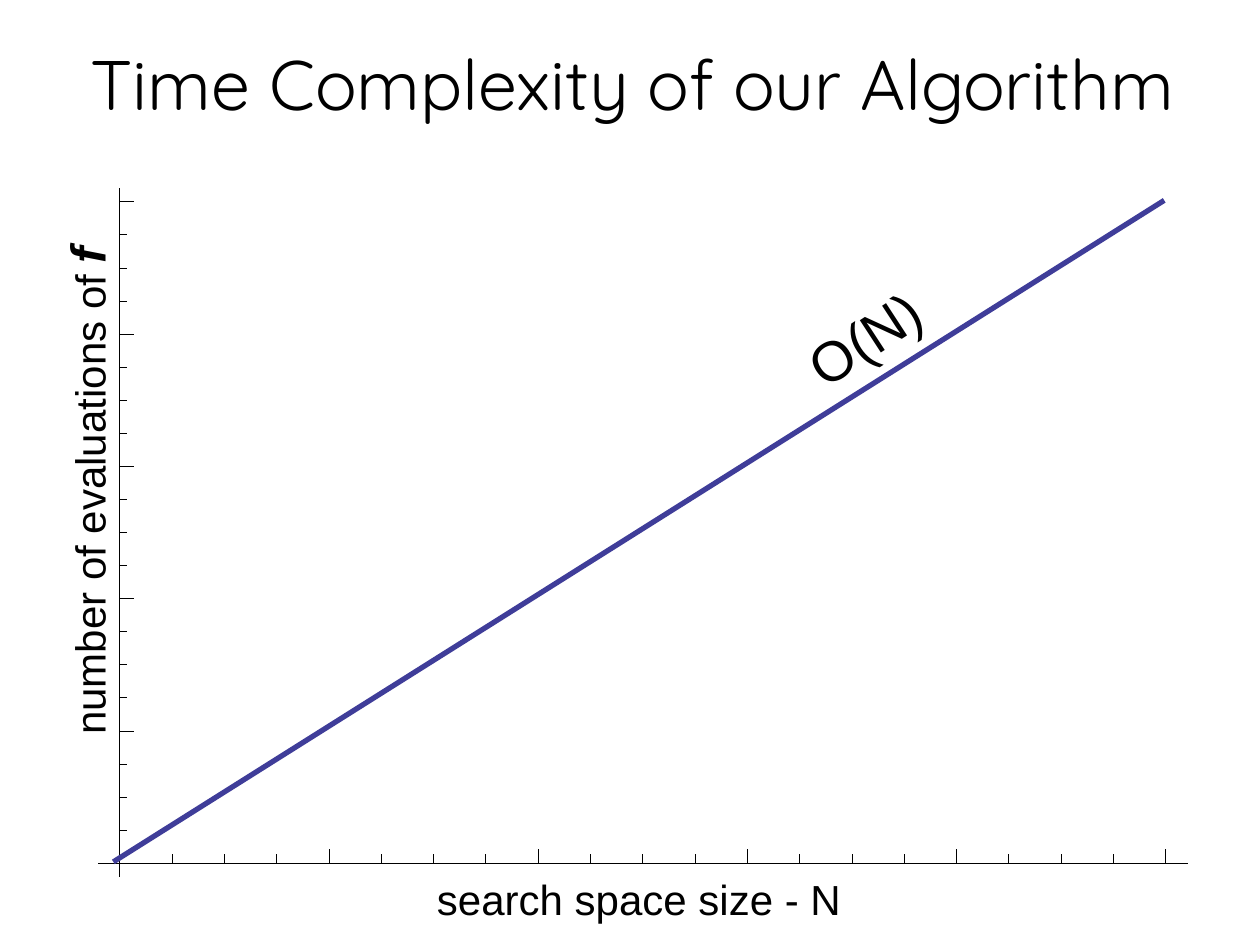
from lxml import etree
from pptx import Presentation
from pptx.dml.color import RGBColor
from pptx.enum.shapes import MSO_CONNECTOR
from pptx.enum.text import MSO_ANCHOR, MSO_AUTO_SIZE, PP_ALIGN
from pptx.oxml.ns import qn
from pptx.util import Inches, Pt

STRAIGHT = MSO_CONNECTOR.STRAIGHT
MIDDLE = MSO_ANCHOR.MIDDLE
NO_FIT, GROW = MSO_AUTO_SIZE.NONE, MSO_AUTO_SIZE.SHAPE_TO_FIT_TEXT
LEFT = PP_ALIGN.LEFT

BLACK, BLUE = "000000", "3F3D99"
ORIGIN_X, ORIGIN_Y = 0.95, 6.85
END_X, END_Y = 9.25, 1.6
TICKS, MAJOR_EVERY = 20, 4


def color(value):
    """Turn a hex string into a colour."""
    return RGBColor.from_string(value)


def add_text(p, text, size=24, font="Arial", fill=BLACK, bold=False, italic=False):
    """Append a formatted run to a paragraph."""
    r = p.add_run()
    r.text = text
    r.font.size = Pt(size)
    r.font.name = font
    r.font.bold = bold
    r.font.italic = italic
    r.font.color.rgb = color(fill)


def add_title(slide, text):
    """Place and format the title placeholder."""
    sp = slide.shapes.title
    sp.left, sp.top = Inches(0.62), Inches(-0.03)
    sp.width, sp.height = Inches(9.1), Inches(1.45)
    tf = sp.text_frame
    tf.auto_size = NO_FIT
    tf.word_wrap = True
    tf.vertical_anchor = MIDDLE
    p = tf.paragraphs[0]
    p.alignment = LEFT
    p.line_spacing = 0.9
    add_text(p, text, size=40, font="Quicksand")


def add_label(shapes, left, top, width, height, rotation=0):
    """Add an unwrapped text box and return its paragraph."""
    sp = shapes.add_textbox(Inches(left), Inches(top), Inches(width), Inches(height))
    sp.rotation = rotation
    tf = sp.text_frame
    tf.word_wrap = False
    tf.auto_size = GROW
    return tf.paragraphs[0]


def add_line(shapes, x1, y1, x2, y2):
    """Add a thin black line without a shadow."""
    line = shapes.add_connector(STRAIGHT, Inches(x1), Inches(y1), Inches(x2), Inches(y2))
    line.line.color.rgb = color(BLACK)
    line.line.width = Pt(0.25)
    etree.SubElement(line._element.spPr, qn("a:effectLst"))


def add_axes(shapes):
    """Draw both axes with major and minor ticks."""
    add_line(shapes, 0.78, ORIGIN_Y, 9.43, ORIGIN_Y)
    add_line(shapes, ORIGIN_X, 6.96, ORIGIN_X, 1.49)
    for i in range(TICKS + 1):
        major = i % MAJOR_EVERY == 0
        x = ORIGIN_X + i * (END_X - ORIGIN_X) / TICKS
        y = ORIGIN_Y + i * (END_Y - ORIGIN_Y) / TICKS
        add_line(shapes, x, ORIGIN_Y, x, ORIGIN_Y - (0.11 if major else 0.07))
        add_line(shapes, ORIGIN_X, y, ORIGIN_X + (0.11 if major else 0.06), y)


def add_curve(shapes, points):
    """Draw an open curve through the points."""
    start, *rest = [(Inches(x), Inches(y)) for x, y in points]
    builder = shapes.build_freeform(*start)
    builder.add_line_segments(rest, close=False)
    sp = builder.convert_to_shape()
    sp.shadow.inherit = False
    sp.fill.background()
    sp.line.color.rgb = color(BLUE)
    sp.line.width = Pt(3)


def main():
    """Build and save the slide."""
    prs = Presentation()
    prs.slide_width, prs.slide_height = Inches(10), Inches(7.5)
    slide = prs.slides.add_slide(prs.slide_layouts[5])
    add_title(slide, "Time Complexity of our Algorithm")

    shapes = slide.shapes.add_group_shape().shapes
    add_axes(shapes)
    add_text(add_label(shapes, 3.37, 6.88, 3.53, 0.5), "search space size - N")
    p = add_label(shapes, -1.37, 3.59, 4.11, 0.57, rotation=270)
    add_text(p, "number of evaluations of ")
    add_text(p, "f", size=28, bold=True, italic=True)
    add_text(add_label(shapes, 6.28, 2.36, 1.17, 0.64, rotation=326.9), "O(N)", size=32)
    add_curve(shapes, [(0.9, 6.84), (9.24, 1.59)])

    prs.save("out.pptx")


if __name__ == "__main__":
    main()
